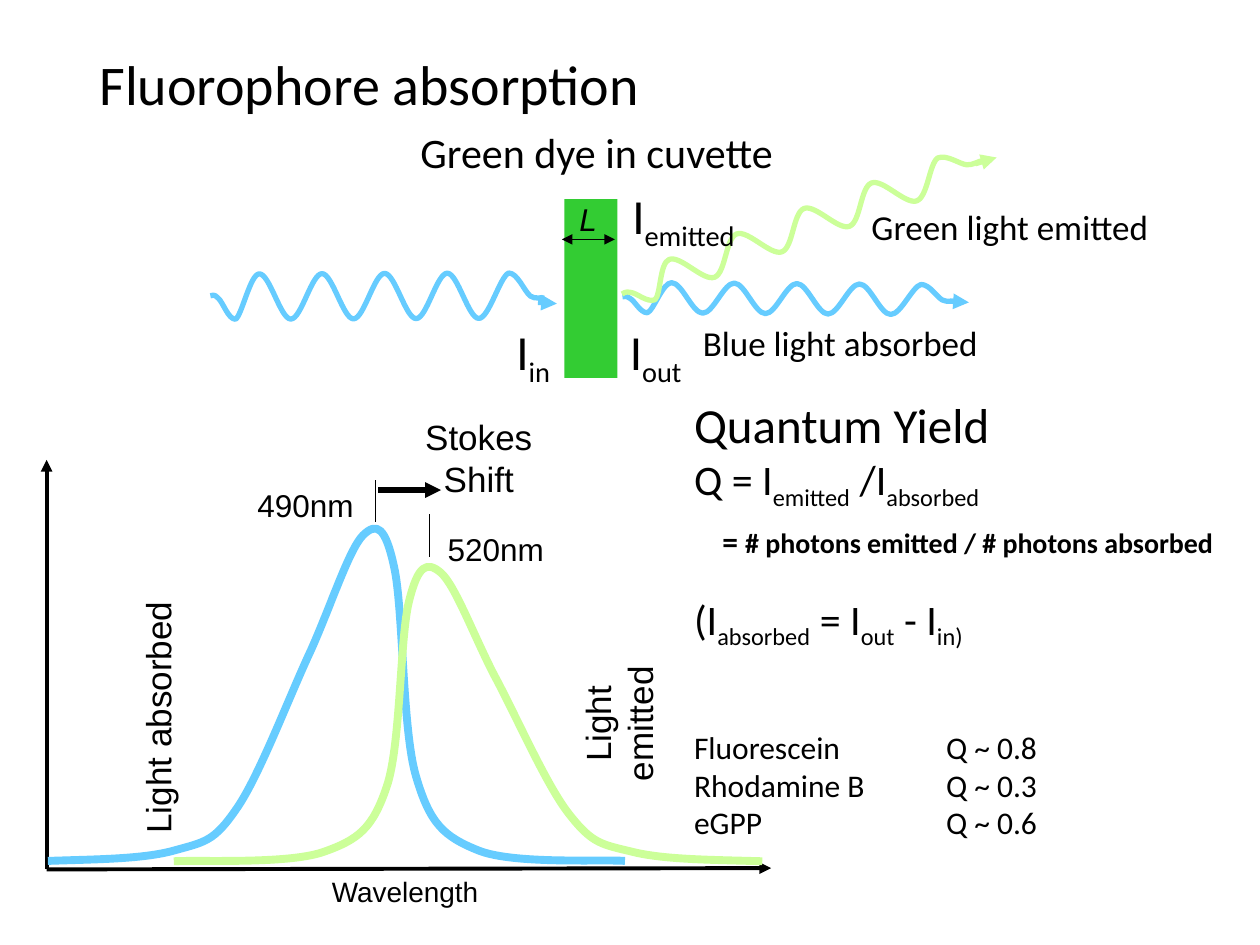
from lxml import etree
from pptx import Presentation
from pptx import util as u
from pptx.dml.color import RGBColor
from pptx.enum import shapes, text
from pptx.oxml.ns import qn

CELL = 0.1  # the slide is a grid of 100 columns by 75 rows
BLACK, BLUE, LIME, GREEN = "000000", "66CCFF", "CCFF99", "33CC33"
LEFT, CENTER = text.PP_ALIGN.LEFT, text.PP_ALIGN.CENTER
TOP, MIDDLE = text.MSO_ANCHOR.TOP, text.MSO_ANCHOR.MIDDLE

# Bezier points in percent of the curve's box: a start, then threes
SPECTRUM = [
    (0, 99), (8.3, 98.5), (16.4, 98.5), (21.8, 96),
    (27.3, 93.4), (28.8, 93.4), (32.8, 83.5),
    (36.7, 74), (41.9, 50.7), (45.6, 37.5),
    (49.1, 24.3), (52.2, 8.1), (54.6, 4),
    (57, 0), (58.5, 1.5), (60, 13.2),
    (61.6, 25), (61.4, 60.7), (63.8, 74.3),
    (66.2, 88.2), (68.6, 91.9), (74.7, 96),
    (80.8, 100), (95.8, 98.5), (100, 99),
]


def wave_points():
    """A short lead-in, seven even half waves and a lead-out."""
    points = [(0, 48), (0.4, 48), (1.1, 43), (2.3, 53),
              (3.8, 62), (5.3, 100), (7.5, 100),
              (9.4, 92), (12, 0), (14.7, 0)]
    x, y, half = 14.7, 0, 9.38
    for _ in range(7):
        points += [(x + half / 3, y), (x + half * 2 / 3, 100 - y), (x + half, 100 - y)]
        x, y = x + half, 100 - y
    return points + [(83.4, 100), (86.8, 7), (89.4, 0),
                     (92, 0), (94, 40), (95.8, 51),
                     (97.4, 59), (98.9, 53), (100, 56)]


def color(value):
    return RGBColor.from_string(value)


def size(cells):
    return u.Inches(cells * CELL)


def add_runs(p, content, pt, font="Calibri", bold=None, italic=None):
    """Add text to a paragraph; parts between underscores are subscripts."""
    for i, part in enumerate(content.split("_")):
        if not part:
            continue
        r = p.add_run()
        r.text = part
        f = r.font
        f.name, f.size, f.bold, f.italic = font, u.Pt(pt), bold, italic
        f.color.rgb = color(BLACK)
        if i % 2:
            r._r.get_or_add_rPr().set("baseline", "-25000")


class Region:
    """A part of the slide; places things in cells from its own corner."""

    def __init__(self, slide, left, top):
        self.shapes, self.left, self.top = slide.shapes, left, top

    def box(self, x, y, w, h):
        return size(self.left + x), size(self.top + y), size(w), size(h)

    def frame(self, box, anchor=TOP, wrap=False, rotation=0):
        sp = self.shapes.add_textbox(*self.box(*box))
        sp.rotation = rotation
        tf = sp.text_frame
        tf.word_wrap, tf.vertical_anchor = wrap, anchor
        if not wrap:
            tf.auto_size = text.MSO_AUTO_SIZE.SHAPE_TO_FIT_TEXT
        return tf

    def label(self, content, box, pt, font="Calibri", align=CENTER, anchor=MIDDLE,
              wrap=False, rotation=0, italic=None):
        p = self.frame(box, anchor, wrap, rotation).paragraphs[0]
        p.alignment = align
        add_runs(p, content, pt, font, italic=italic)
        return p

    def line(self, x1, y1, x2, y2, width, rgb=BLACK, ends=()):
        start, end = self.box(x1, y1, 0, 0)[:2], self.box(x2, y2, 0, 0)[:2]
        c = self.shapes.add_connector(shapes.MSO_CONNECTOR.STRAIGHT, *start, *end)
        c.line.color.rgb, c.line.width = color(rgb), u.Pt(width)
        for end_name in ends:
            etree.SubElement(c.line._get_or_add_ln(), qn(f"a:{end_name}"), type="triangle")
        etree.SubElement(c._element.spPr, qn("a:effectLst"))

    def curve(self, points, box, width, rgb, rotation=0, mirror=False):
        x, y, w, h = self.box(*box)
        spots = [(x + w * ((100 - px) if mirror else px) / 100, y + h * py / 100)
                 for px, py in points]
        builder = self.shapes.build_freeform(*spots[0], scale=1.0)
        builder.add_line_segments(spots[1:], close=False)
        sp = builder.convert_to_shape()
        sp.shadow.inherit = False
        sp.fill.background()
        sp.line.color.rgb, sp.line.width = color(rgb), u.Pt(width)
        sp.rotation = rotation
        # Turn each three straight segments into one Bezier segment
        path = next(sp._element.iter(qn("a:path")))
        segments = path.findall(qn("a:lnTo"))
        for i in range(0, len(segments), 3):
            bezier = etree.SubElement(path, qn("a:cubicBezTo"))
            for segment in segments[i:i + 3]:
                bezier.append(segment[0])
                path.remove(segment)


def add_title(slide, left, top):
    p = Region(slide, left, top).label("Fluorophore absorption", (0, 0, 86.2, 14.5), 32,
                                       align=LEFT, anchor=TOP, wrap=True)
    p.line_spacing = 0.9


def add_spectrum(slide, left, top):
    reg = Region(slide, left, top)
    # Axes and curves
    reg.line(0, 35, 0, 2.5, 2.25, ends=["tailEnd"])
    reg.curve(SPECTRUM, (0.1, 7.4, 45.8, 27.2), 4.5, BLUE)
    reg.line(0, 35, 57.5, 34.9, 2.25, ends=["tailEnd"])
    reg.curve(SPECTRUM, (10.1, 10.5, 46.7, 24.1), 4.5, LIME, mirror=True)
    # Peak marks and the shift between them
    reg.line(26.1, 7.4, 26.1, 4.1, 0.75)
    reg.line(30.4, 10.2, 30.4, 6.8, 0.75)
    reg.line(26.3, 4.9, 31.3, 4.9, 3, ends=["tailEnd"])
    for content, box, pt in [("490nm", (15.7, 4.1, 9.7, 4), 18),
                             ("520nm", (30.8, 7.6, 9.7, 4), 18),
                             ("Stokes Shift", (25.9, 0.2, 16.8, 4.3), 20),
                             ("Wavelength", (21.6, 34.9, 13.7, 3.7), 16)]:
        reg.label(content, box, pt, "Arial")
    # Upright labels
    reg.label("Light absorbed", (-1.4, 20.8, 20.4, 4.3), 20, "Arial", rotation=270)
    reg.label("Light emitted", (36.6, 21.3, 17.5, 4.3), 20, "Arial", wrap=True, rotation=270)


def add_cuvette(slide, left, top):
    reg = Region(slide, left, top)
    # Light in, light out and emitted light: wave, then its arrow
    for rgb, box, rotation, arrow in [
            (BLUE, (0.7, 12.7, 26.5, 3.6), -0.2, (26.7, 15, 28.2, 15.1)),
            (BLUE, (33.4, 13.5, 26.5, 2.4), 0.4, (59.4, 14.9, 60.9, 15)),
            (LIME, (32.4, 7.7, 30.5, 2.6), -20.7, (61.4, 4, 63.1, 3.5))]:
        reg.curve(wave_points(), box, 3, rgb, rotation)
        reg.line(*arrow, 3, rgb, ["tailEnd"])
    # Cuvette and its path length
    sp = reg.shapes.add_shape(shapes.MSO_SHAPE.RECTANGLE, *reg.box(28.8, 6.8, 4.2, 14.2))
    sp.shadow.inherit = False
    sp.fill.solid()
    sp.fill.fore_color.rgb = color(GREEN)
    sp.line.fill.background()
    reg.line(28.6, 10, 32.8, 10, 0.75, ends=["headEnd", "tailEnd"])
    reg.label("L", (29, 6.4, 3.4, 4), 18, "Arial", LEFT, TOP, italic=True)
    # Captions
    reg.label("Green dye in cuvette", (16.2, 0.5, 30.3, 5.1), 24)
    reg.label("Blue light absorbed", (38.7, 16, 24, 4.4), 20)
    reg.label("Green light emitted", (52, 6.8, 24.3, 4.4), 20)
    # Intensities
    for content, x, y, w in [("I_in", 24, 16, 5), ("I_out", 33, 16, 6.6),
                             ("I_emitted", 33.2, 5.2, 11.3)]:
        reg.label(content, (x, y, w, 5.7), 28, align=LEFT, anchor=TOP)


def add_quantum_yield(slide, left, top):
    tf = Region(slide, left, top).frame((0, 0, 43.9, 33.5), MIDDLE, wrap=True)
    # Text, size, bold, space before and after
    rows = [("Quantum Yield", 28, False, 0, 0),
            ("Q = I_emitted_ /I_absorbed", 24, False, 0, 6),
            ("# photons emitted / # photons absorbed", 16, True, 0, 0),
            ("(I_absorbed_ = I_out_ - I_in)", 24, False, 19.5, 0),
            ("Fluorescein\tQ ~ 0.8", 18, False, 44, 0),
            ("Rhodamine B\tQ ~ 0.3", 18, False, 0, 0),
            ("eGPP\tQ ~ 0.6", 18, False, 0, 0)]
    for i, (content, pt, bold, before, after) in enumerate(rows):
        p = tf.add_paragraph() if i else tf.paragraphs[0]
        p.space_before, p.space_after = u.Pt(before), u.Pt(after)
        pPr = p._p.get_or_add_pPr()
        if bold:
            pPr.set("marL", str(int(size(2.25))))
            pPr.set("indent", "0")
            add_runs(p, "= ", 18, bold=True)
        if "\t" in content:
            tabs = etree.SubElement(pPr, qn("a:tabLst"))
            etree.SubElement(tabs, qn("a:tab"), pos=str(int(size(20))), algn="l")
        add_runs(p, content, pt, bold=bold)


def main():
    prs = Presentation()
    prs.slide_width, prs.slide_height = size(100), size(75)
    slide = prs.slides.add_slide(prs.slide_layouts[6])
    add_title(slide, 6.9, 4)
    add_spectrum(slide, 3.7, 34)
    add_cuvette(slide, 16, 9)
    add_quantum_yield(slide, 54.1, 32.3)
    prs.save("out.pptx")


if __name__ == "__main__":
    main()
